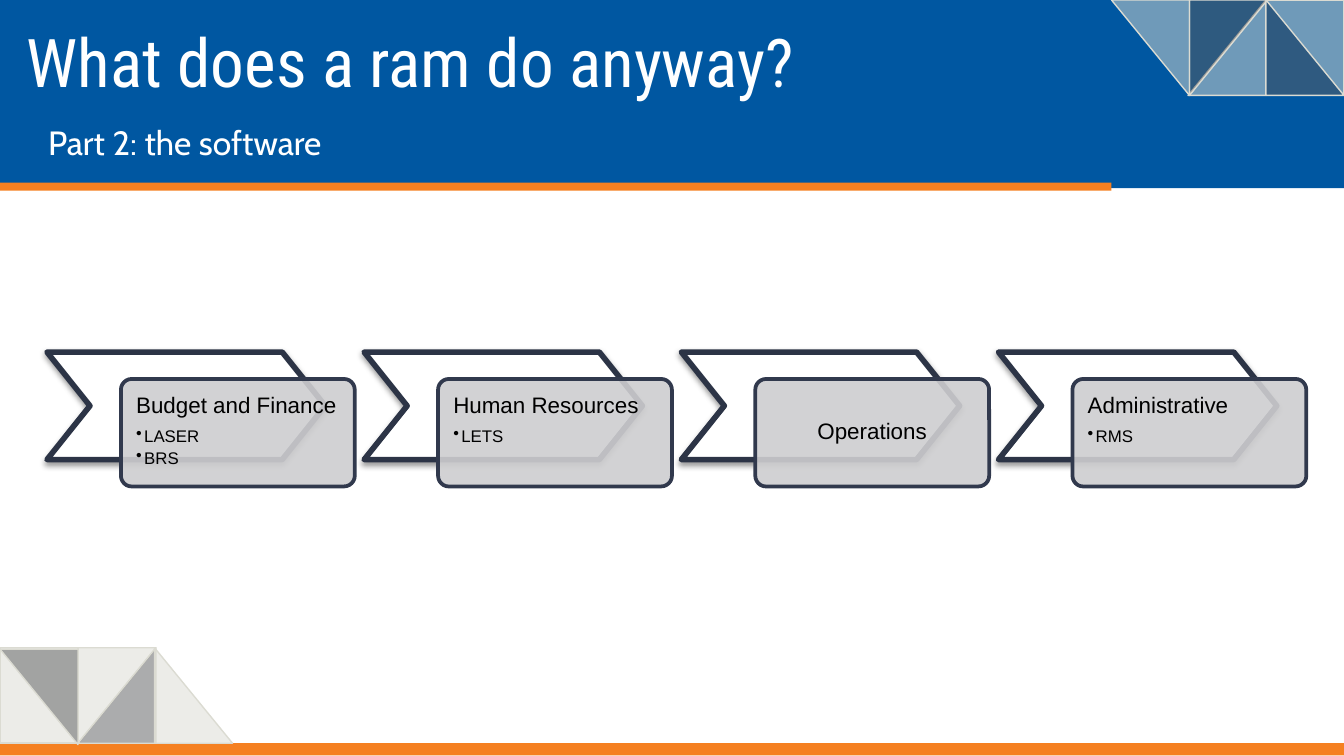
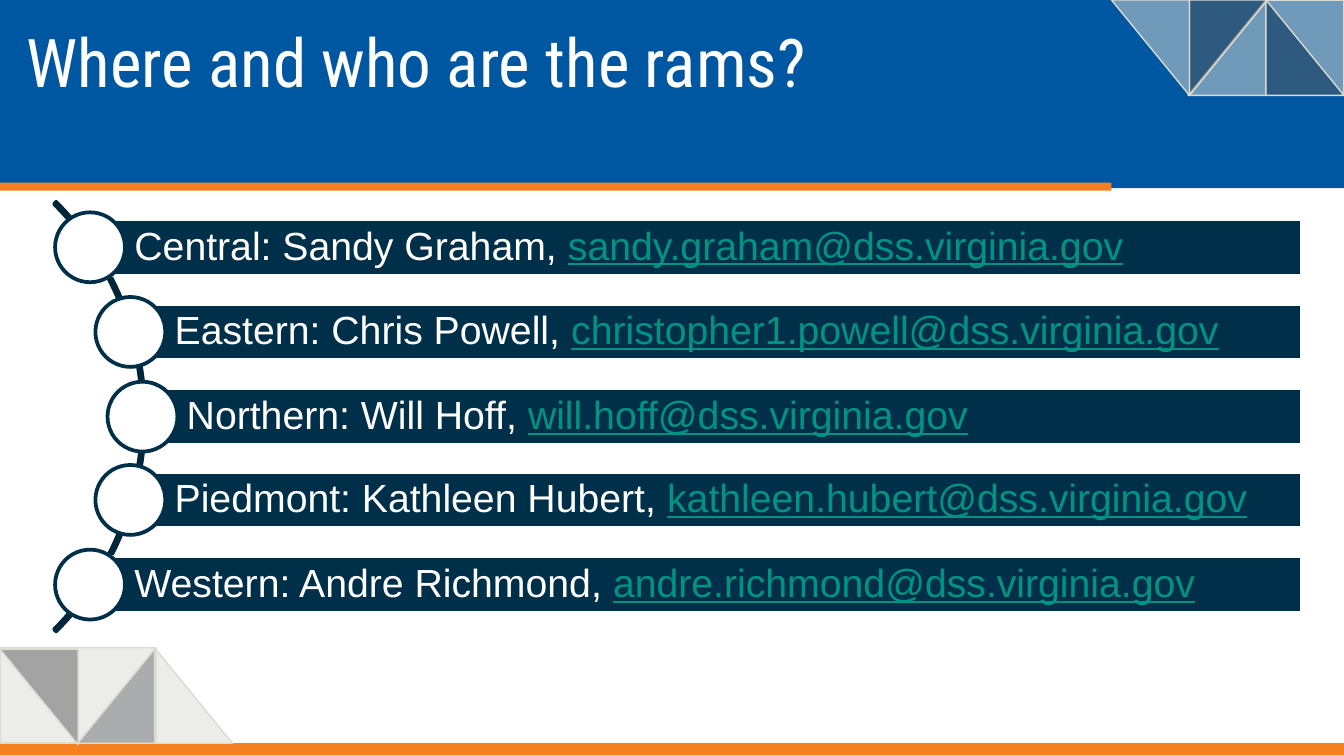
from lxml import etree
from pptx import Presentation
from pptx.dml.color import RGBColor
from pptx.enum.shapes import MSO_SHAPE
from pptx.enum.text import MSO_ANCHOR, PP_ALIGN
from pptx.oxml.ns import qn
from pptx.util import Emu, Pt

PX = 9144  # 100 px to the inch

WHITE = RGBColor(0xFF, 0xFF, 0xFF)
BLACK = RGBColor(0x00, 0x00, 0x00)
BLUE = RGBColor(0x00, 0x57, 0xA1)
ORANGE = RGBColor(0xF5, 0x80, 0x21)
STONE = RGBColor(0xDB, 0xDB, 0xD2)
GREY = RGBColor(0x5C, 0x5D, 0x5F)
STEEL = RGBColor(0x2F, 0x5A, 0x80)
CHEVRON_LINE = RGBColor(0x2C, 0x34, 0x46)
CARD = RGBColor(0xCE, 0xCE, 0xD0)
CARD_LINE = RGBColor(0x31, 0x39, 0x4D)
NAVY = RGBColor(0x00, 0x2F, 0x4A)
ARC = RGBColor(0x00, 0x26, 0x3B)
LINK = RGBColor(0x00, 0x93, 0x84)

RECT, TRI = MSO_SHAPE.RECTANGLE, MSO_SHAPE.RIGHT_TRIANGLE


def add_shape(s, kind, box, fill=None, line=None, width=0.75, alpha=100):
    sp = s.shapes.add_shape(kind, *[Emu(v * PX) for v in box])
    sp.shadow.inherit = False
    if fill is None:
        sp.fill.background()
    else:
        sp.fill.solid()
        sp.fill.fore_color.rgb = fill
        if alpha < 100:
            clr = sp._element.spPr.find(qn("a:solidFill"))[0]
            etree.SubElement(clr, qn("a:alpha"), val=str(alpha * 1000))
    if line is None:
        sp.line.fill.background()
    else:
        sp.line.color.rgb = line
        sp.line.width = Pt(width)
        etree.SubElement(sp._element.spPr.find(qn("a:ln")), qn("a:round"))
    return sp


def add_run(p, text, size, color, font="Arial"):
    r = p.add_run()
    r.text = text
    r.font.size = Pt(size)
    r.font.name = font
    r.font.color.rgb = color
    return r


prs = Presentation()
prs.slide_width = Emu(1000 * PX)
prs.slide_height = Emu(1000 * PX * 9 // 16)

# Shared look: header, accent bands, corner triangles, title
BANDS = [((0, 0, 1000, 140), BLUE), ((0, 553, 1000, 9), ORANGE),
         ((0, 136, 827, 6), ORANGE)]
# kind, left, top, fill, opacity, rotation, flipped
CORNERS = [
    (RECT, 942, 0, STONE, 51, 0, False),
    (TRI, 884, 0, STONE, 51, 0, True),
    (TRI, 885, 0, GREY, 51, 180, True),
    (TRI, 827, 0, STONE, 51, 180, False),
    (TRI, 942, 0, STEEL, 100, 0, False),
    (RECT, 0, 482, STONE, 51, 0, False),
    (TRI, 58, 482, STONE, 51, 180, True),
    (TRI, 58, 482, GREY, 51, 0, True),
    (TRI, 115, 482, STONE, 51, 0, False),
    (TRI, 0, 483, GREY, 51, 180, False),
]
HEADINGS = [("What does a ram do anyway?", "Part 2: the software"),
            ("Where and who are the rams?", None)]

slides = []
for title, subtitle in HEADINGS:
    s = prs.slides.add_slide(prs.slide_layouts[6])
    slides.append(s)
    for box, color in BANDS:
        add_shape(s, RECT, box, color)
    for kind, x, y, color, alpha, rotation, flipped in CORNERS:
        sp = add_shape(s, kind, (x, y, 58, 71), color, STONE, alpha=alpha)
        sp.rotation = rotation
        if flipped:
            sp._element.spPr.find(qn("a:xfrm")).set("flipH", "1")
    lines = [(title, (10, 5, 932, 60), 36, "Roboto Condensed", 0, 1.0),
             (subtitle, (10, 76, 924, 56), 18, "Cabin", 16, 1.15)]
    for text, box, size, font, indent, spacing in lines:
        if text is None:
            continue
        tf = s.shapes.add_textbox(*[Emu(v * PX) for v in box]).text_frame
        tf.word_wrap = True
        tf.margin_left = tf.margin_right = Emu(10 * PX)
        tf.margin_top = tf.margin_bottom = Emu(10 * PX)
        p = tf.paragraphs[0]
        p._p.get_or_add_pPr().set("marL", str(indent * PX))
        p.line_spacing = spacing
        add_run(p, text, size, WHITE, font)

# Slide 1: chevrons with software cards
AREAS = [("Budget and Finance", ["LASER", "BRS"]),
         ("Human Resources", ["LETS"]),
         ("Operations", []),
         ("Administrative", ["RMS"])]
s = slides[0]
for i, (area, systems) in enumerate(AREAS):
    x = 35 + 236 * i
    sp = add_shape(s, MSO_SHAPE.CHEVRON, (x, 262, 207, 80), WHITE, CHEVRON_LINE, 3)
    sp.adjustments[0] = 0.4
    shadow = etree.SubElement(
        sp._element.spPr.find(qn("a:effectLst")), qn("a:outerShdw"),
        blurRad=str(Pt(3.1)), dist=str(Pt(1.6)), dir="5400000", rotWithShape="0")
    clr = etree.SubElement(shadow, qn("a:srgbClr"), val="000000")
    etree.SubElement(clr, qn("a:alpha"), val="38000")

    sp = add_shape(s, MSO_SHAPE.ROUNDED_RECTANGLE, (x + 55, 282, 174, 80),
                   CARD, CARD_LINE, 2, alpha=90)
    sp.adjustments[0] = 0.1
    tf = sp.text_frame
    tf.word_wrap = True
    tf.margin_left = tf.margin_right = Emu(9 * PX)
    tf.margin_top = tf.margin_bottom = Emu(9 * PX)
    tf.vertical_anchor = MSO_ANCHOR.TOP if systems else MSO_ANCHOR.MIDDLE
    p = tf.paragraphs[0]
    p.alignment = PP_ALIGN.LEFT if systems else PP_ALIGN.CENTER
    p.line_spacing = 0.9
    p.space_after = Pt(5)
    add_run(p, area, 12, BLACK)
    for system in systems:
        p = tf.add_paragraph()
        p.level = 1
        p.alignment = PP_ALIGN.LEFT
        p.line_spacing = 0.9
        p.space_after = Pt(2)
        pPr = p._p.get_or_add_pPr()
        pPr.set("marL", str(6 * PX))
        pPr.set("indent", str(-6 * PX))
        etree.SubElement(pPr, qn("a:buChar"), char="•")
        add_run(p, system, 9, BLACK)

# Slide 2: regional contacts along an arc
CONTACTS = [
    (67, "Central: Sandy Graham, ", "sandy.graham@dss.virginia.gov"),
    (97, "Eastern: Chris Powell, ", "christopher1.powell@dss.virginia.gov"),
    (106, "Northern: Will Hoff, ", "will.hoff@dss.virginia.gov"),
    (97, "Piedmont: Kathleen Hubert, ", "kathleen.hubert@dss.virginia.gov"),
    (67, "Western: Andre Richmond, ", "andre.richmond@dss.virginia.gov"),
]
s = slides[1]
sp = add_shape(s, MSO_SHAPE.BLOCK_ARC, (-344, 84, 452, 452), None, ARC, 2)
for i, value in enumerate((189, 27, 0.005)):  # 315° to 45°, hairline thick
    sp.adjustments[i] = value
for i, (x, name, email) in enumerate(CONTACTS):
    y = 163 + round(62.8 * i)
    sp = add_shape(s, RECT, (x, y, 969 - x, 42), NAVY, WHITE, 2)
    tf = sp.text_frame
    tf.word_wrap = True
    tf.vertical_anchor = MSO_ANCHOR.MIDDLE
    tf.margin_left = Emu(33 * PX)
    tf.margin_top = tf.margin_right = tf.margin_bottom = Emu(6 * PX)
    p = tf.paragraphs[0]
    p.alignment = PP_ALIGN.LEFT
    p.line_spacing = 0.9
    add_run(p, name, 21, WHITE)
    add_run(p, email, 21, LINK).font.underline = True
    add_shape(s, MSO_SHAPE.OVAL, (x - 26, y - 5, 52, 52), WHITE, NAVY, 2)

prs.save("out.pptx")
